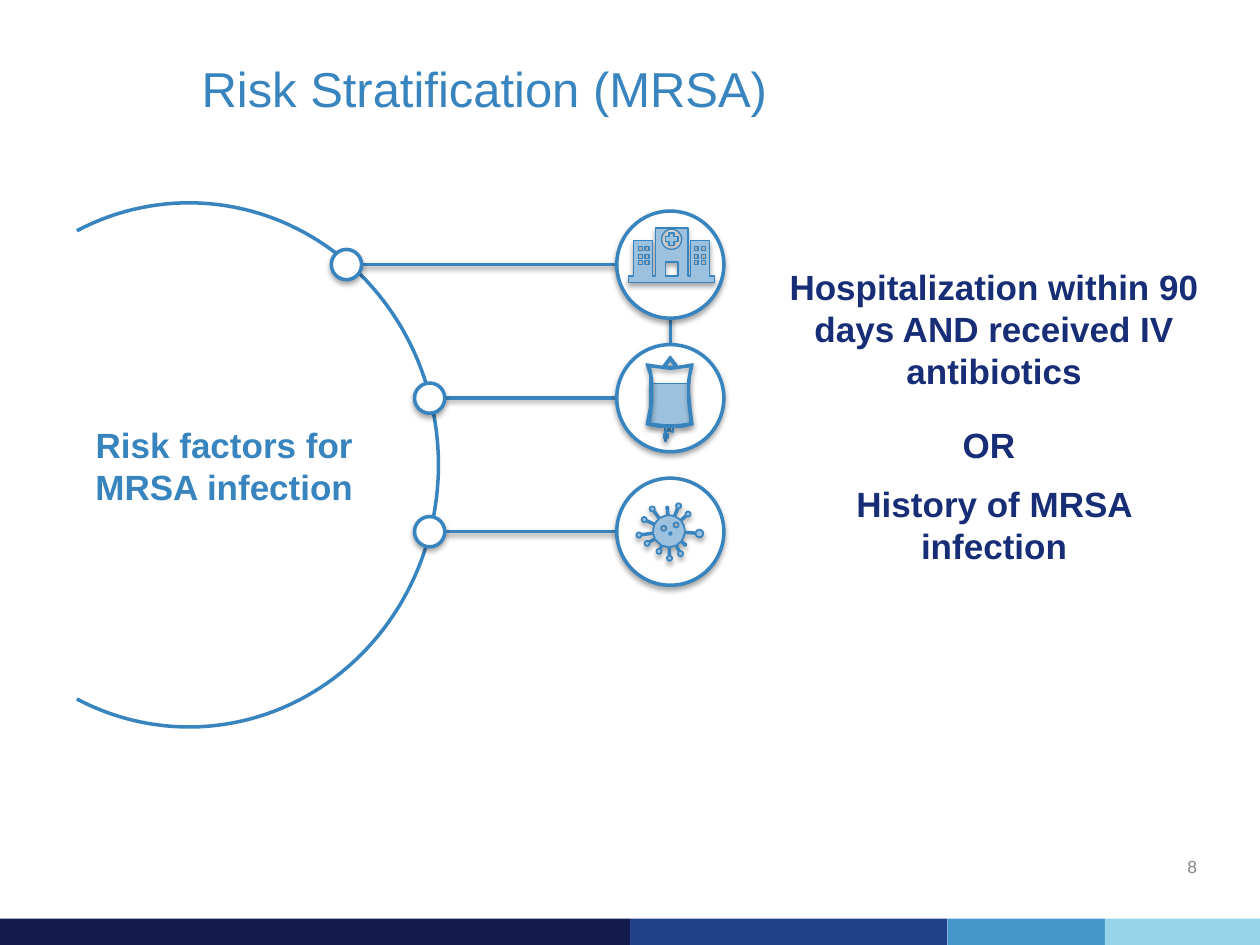
from math import asin, atan2, cos, hypot, pi, radians, sin

from lxml import etree
from pptx import Presentation
from pptx.dml.color import RGBColor
from pptx.enum.shapes import MSO_CONNECTOR, MSO_SHAPE
from pptx.enum.text import MSO_ANCHOR, PP_ALIGN
from pptx.oxml.ns import qn
from pptx.util import Inches, Pt

RECT, OVAL = MSO_SHAPE.RECTANGLE, MSO_SHAPE.OVAL
STRAIGHT = MSO_CONNECTOR.STRAIGHT
TOP, MIDDLE = MSO_ANCHOR.TOP, MSO_ANCHOR.MIDDLE
LEFT, CENTER, RIGHT = PP_ALIGN.LEFT, PP_ALIGN.CENTER, PP_ALIGN.RIGHT
BLUE, NAVY, PALE, WHITE, GREY = "3884BF", "172E77", "9BC1DF", "FFFFFF", "888888"
WIDTH, HEIGHT = 10, 7.5

# text, box, size, colour, bold, alignment, anchor, inset, wrap
TITLE = ("Risk Stratification (MRSA)", (1.6, 0.36, 4.86, 0.67),
         28, BLUE, False, LEFT, MIDDLE, 0, True)
LABELS = [
    ("8", (9.36, 6.8, 0.14, 0.15), 10, GREY, False, RIGHT, MIDDLE, 0, False),
    ("Hospitalization within 90 days AND received IV antibiotics",
     (6.19, 2.06, 3.4, 1.19), 20, NAVY, True, CENTER, TOP, 0.05, True),
    ("History of MRSA infection", (6.19, 3.78, 3.4, 0.88),
     20, NAVY, True, CENTER, TOP, 0.05, True),
    ("OR", (7.59, 3.31, 0.61, 0.49), 20, NAVY, True, LEFT, TOP, 0.05, True),
    ("Risk factors for MRSA infection", (0.42, 3.31, 2.72, 0.88),
     20, BLUE, True, CENTER, TOP, 0.05, True),
]
FOOTER = [("131B4D", 5), ("21428A", 2.52), ("4597CB", 1.25), ("97D4E9", 1.23)]

# Risk factor rows
ROW_TOP, ROW_GAP = 2.1, 1.06
DOT_CENTERS = [2.75, 3.41, 3.41]
DOT, ICON, ICON_CENTER = 0.24, 0.85, 5.32

# Hospital icon
HOSPITAL = [(4.99, 2.19), (5.03, 2.19), (5.03, 1.91), (5.18, 1.91), (5.18, 2.19),
            (5.2, 2.19), (5.2, 1.81), (5.46, 1.81), (5.46, 2.19), (5.48, 2.19),
            (5.48, 1.91), (5.63, 1.91), (5.63, 2.19), (5.67, 2.19), (5.67, 2.24),
            (4.99, 2.24)]
WINDOW_COLUMNS, WINDOW_ROWS = (5.07, 5.12, 5.51, 5.57), (1.96, 2.02, 2.07)
DOOR = (5.28, 2.08, 0.1, 0.11)
SIGN = (5.33, 1.9)

# IV bag icon
BAG_OUTER = [(5.32, 2.83), (5.38, 2.91), (5.5, 2.89), (5.48, 2.98), (5.47, 3.09),
             (5.48, 3.22), (5.5, 3.37), (5.41, 3.39), (5.23, 3.39), (5.13, 3.37),
             (5.16, 3.22), (5.16, 3.09), (5.16, 2.98), (5.13, 2.89), (5.26, 2.91)]
BAG_INNER = [(5.32, 2.93), (5.48, 2.91), (5.46, 3.02), (5.46, 3.18), (5.48, 3.36),
             (5.32, 3.38), (5.16, 3.36), (5.18, 3.18), (5.18, 3.02), (5.16, 2.91)]
BAG_HOOK = [(5.32, 2.86), (5.36, 2.91), (5.28, 2.91)]
BAG_FLUID = (5.16, 3.04, 0.31, 0.33)
BAG_PORTS = [(5.32, 3.39, 0.02, 0.03), (5.28, 3.39, 0.02, 0.03)]
BAG_TUBES = [(5.28, 3.42, 0.01, 0.08), (5.27, 3.44, 0.03, 0.04), (5.33, 3.42, 0.01, 0.01)]

# Virus icon: x, y and radius of each circle
VIRUS_BODY = (5.31, 4.215, 0.125)
VIRUS_KNOBS = [
    (5.55, 4.25, 0.03), (5.47, 4.09, 0.02), (5.4, 4.02, 0.02), (5.31, 4.03, 0.01),
    (5.19, 4.03, 0.02), (5.12, 4.11, 0.02), (5.07, 4.23, 0.02), (5.13, 4.3, 0.02),
    (5.22, 4.37, 0.02), (5.3, 4.43, 0.02), (5.39, 4.4, 0.02), (5.43, 4.33, 0.01)]
VIRUS_SPOTS = [(5.27, 4.19, 0.02), (5.32, 4.235, 0.01), (5.37, 4.17, 0.02)]


def color(hex_code):
    return RGBColor.from_string(hex_code)


def add_shadow(part, alpha=35, distance=1.8):
    effects = etree.SubElement(part._element.spPr, qn("a:effectLst"))
    outer = etree.SubElement(effects, qn("a:outerShdw"), blurRad=str(Pt(3)),
                             dist=str(Pt(distance)), dir="5400000", rotWithShape="0")
    black = etree.SubElement(outer, qn("a:srgbClr"), val="000000")
    etree.SubElement(black, qn("a:alpha"), val=str(alpha * 1000))


def style(shape, fill=None, line=None, shadow=True):
    """Set fill colour, line width in points and shadow."""
    if fill:
        shape.fill.solid()
        shape.fill.fore_color.rgb = color(fill)
    else:
        shape.fill.background()
    if line:
        shape.line.color.rgb = color(BLUE)
        shape.line.width = Pt(line)
    else:
        shape.line.fill.background()
    if shadow:
        add_shadow(shape)
    else:
        shape.shadow.inherit = False


def add_preset(slide, kind, box, *look):
    shape = slide.shapes.add_shape(kind, *map(Inches, box))
    style(shape, *look)


def add_disc(slide, x, y, size):
    add_preset(slide, OVAL, (x - size / 2, y - size / 2, size, size), WHITE, 2)


def add_outline(slide, contours, *look, close=True):
    """Draw contours as one freeform; inner contours become holes."""
    contours = [[(Inches(x), Inches(y)) for x, y in contour] for contour in contours]
    builder = slide.shapes.build_freeform(*contours[0][0])
    for index, (start, *rest) in enumerate(contours):
        if index:
            builder.move_to(*start)
        builder.add_line_segments(rest, close=close)
    shape = builder.convert_to_shape()
    style(shape, *look)
    return shape


def add_line(slide, *ends):
    line = slide.shapes.add_connector(STRAIGHT, *map(Inches, ends))
    line.line.color.rgb = color(BLUE)
    line.line.width = Pt(2)
    add_shadow(line, 38, 1.6)


def add_label(slide, text, box, size, hex_code, bold, align, anchor, inset, wrap):
    label = slide.shapes.add_textbox(*map(Inches, box))
    frame = label.text_frame
    frame.text = text
    frame.word_wrap = wrap
    frame.vertical_anchor = anchor
    frame.margin_left = frame.margin_right = Inches(inset)
    frame.margin_top = frame.margin_bottom = Inches(inset)
    paragraph = frame.paragraphs[0]
    paragraph.alignment = align
    font = paragraph.runs[0].font
    font.name, font.size, font.bold = "Arial", Pt(size), bold
    font.color.rgb = color(hex_code)
    return label


def arc(x, y, rx, ry, start, end, steps=12):
    """Points on an ellipse between two angles in radians."""
    angles = [start + (end - start) * i / steps for i in range(steps + 1)]
    return [(x + rx * cos(a), y + ry * sin(a)) for a in angles]


def circle(x, y, r):
    return arc(x, y, r, r, 0, 2 * pi, 24)


def box_points(x, y, w, h):
    return [(x, y), (x + w, y), (x + w, y + h), (x, y + h)]


def cross(x, y, reach, half):
    quarter = [(half, -reach), (half, -half), (reach, -half)]
    points = []
    for _ in range(4):
        points += [(x + dx, y + dy) for dx, dy in quarter]
        quarter = [(-dy, dx) for dx, dy in quarter]
    return points


def virus_outline():
    """Body circle interrupted by a stem and a round knob at each spike."""
    x, y, r = VIRUS_BODY
    stem = 0.007
    spread = asin(stem / r)
    spikes = sorted((atan2(ky - y, kx - x), kx, ky, kr) for kx, ky, kr in VIRUS_KNOBS)
    points = []
    for i, (angle, kx, ky, kr) in enumerate(spikes):
        neck = asin(stem / kr)
        following = spikes[i + 1][0] if i + 1 < len(spikes) else spikes[0][0] + 2 * pi
        points += arc(kx, ky, kr, kr, angle - pi + neck, angle + pi - neck)
        points += arc(x, y, r, r, angle + spread, following - spread, 5)
    return points


def main():
    deck = Presentation()
    deck.slide_width, deck.slide_height = Inches(WIDTH), Inches(HEIGHT)
    slide = deck.slides.add_slide(deck.slide_layouts[6])

    left = 0
    for fill, width in FOOTER:
        add_preset(slide, RECT, (left, 7.29, width, 0.21), fill, None, False)
        left += width
    title = add_label(slide, *TITLE)
    title.fill.solid()
    title.fill.fore_color.rgb = color(WHITE)

    rows = [(x, ROW_TOP + i * ROW_GAP) for i, x in enumerate(DOT_CENTERS)]
    add_line(slide, ICON_CENTER, 2.88, ICON_CENTER, 2.49)
    for x, y in rows:
        add_line(slide, x + DOT / 2, y, 5, y)
    add_outline(slide, [arc(1.5, 3.69, 1.98, 2.08, radians(116.7), radians(-116.7), 120)],
                WHITE, 2, False, close=False)
    for x, y in rows:
        add_disc(slide, x, y, DOT)
    for _, y in rows:
        add_disc(slide, ICON_CENTER, y, ICON)

    windows = [box_points(x, y, 0.03, 0.03) for x in WINDOW_COLUMNS for y in WINDOW_ROWS]
    add_outline(slide, [HOSPITAL, *windows, box_points(*DOOR), circle(*SIGN, 0.08),
                        cross(*SIGN, 0.05, 0.02)], PALE, 0.75)

    add_preset(slide, RECT, BAG_FLUID, PALE, 0.25)
    for port in BAG_PORTS:
        add_preset(slide, RECT, port, None, 1)
    add_outline(slide, [BAG_OUTER, BAG_INNER, BAG_HOOK], BLUE, 1)
    for tube in BAG_TUBES:
        add_preset(slide, RECT, tube, None, 1)

    spots = [circle(*spot) for spot in VIRUS_SPOTS]
    virus = add_outline(slide, [virus_outline(), *spots], PALE, 1)
    virus.rotation = -3.9

    for label in LABELS:
        add_label(slide, *label)
    deck.save("out.pptx")


if __name__ == "__main__":
    main()
